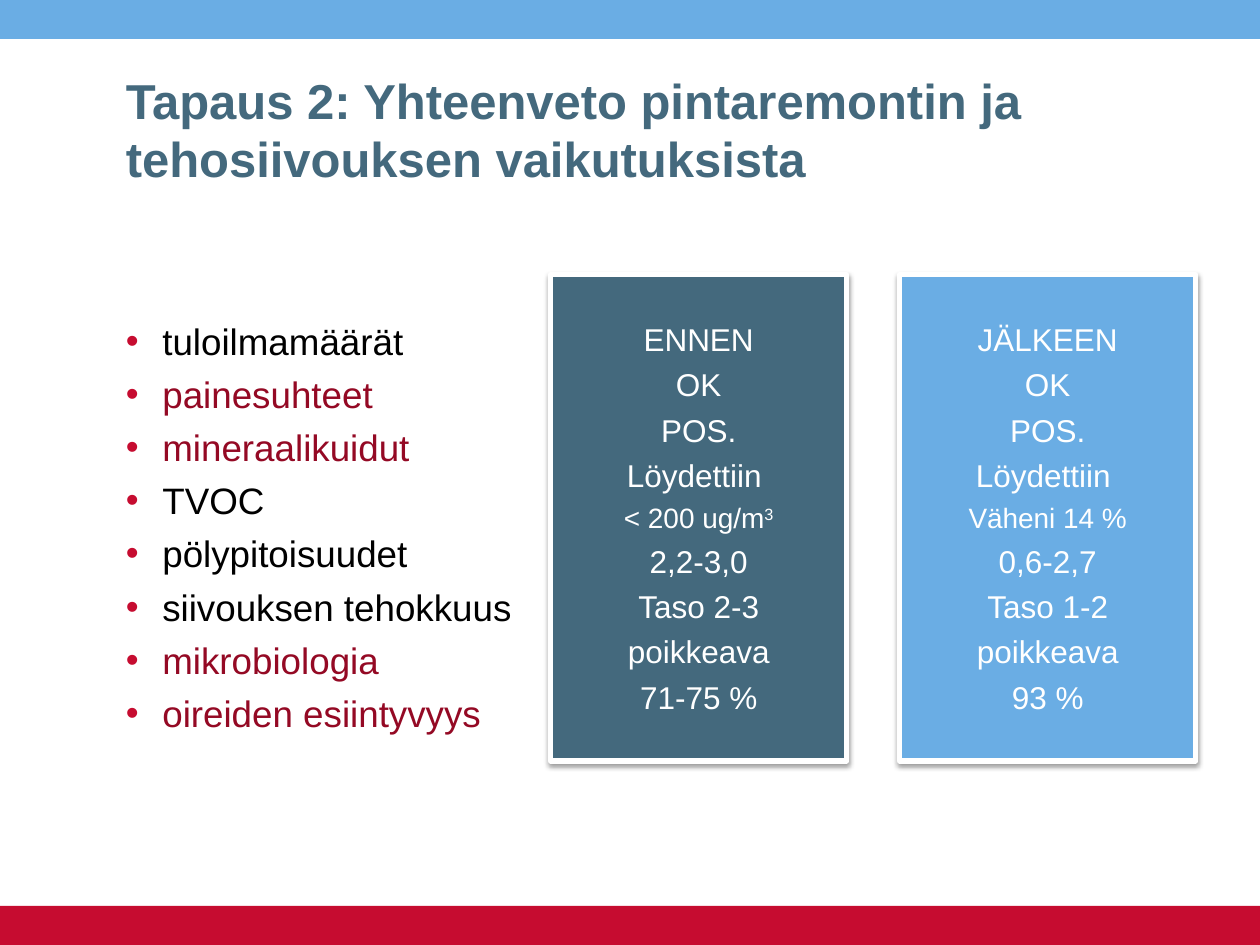
from lxml.etree import SubElement
from pptx import Presentation
from pptx.dml.color import RGBColor
from pptx.enum.shapes import MSO_SHAPE as Shape
from pptx.enum.text import MSO_ANCHOR as Anchor, PP_ALIGN as Align
from pptx.oxml.ns import qn
from pptx.util import Inches, Pt

COLORS = {"sky": "6AADE4", "red": "C60C30", "slate": "44697D",
          "dark_red": "940924", "black": "000000", "white": "FFFFFF"}
TITLE = "Tapaus 2: Yhteenveto pintaremontin ja tehosiivouksen vaikutuksista"
MEASURES = [("tuloilmamäärät", "black"), ("painesuhteet", "dark_red"),
            ("mineraalikuidut", "dark_red"), ("TVOC", "black"),
            ("pölypitoisuudet", "black"), ("siivouksen tehokkuus", "black"),
            ("mikrobiologia", "dark_red"), ("oireiden esiintyvyys", "dark_red")]
RESULTS = [
    ("slate", ["ENNEN", "OK", "POS.", "Löydettiin ", "< 200 ug/m^3", "2,2-3,0",
               "Taso 2-3", "poikkeava", "71-75 %"]),
    ("sky", ["JÄLKEEN", "OK", "POS.", "Löydettiin ", "Väheni 14 %", "0,6-2,7",
             "Taso 1-2", "poikkeava", "93 %"]),
]
SMALL_ROW = 4
BAND_HEIGHT = 0.31
SLIDE_WIDTH, SLIDE_HEIGHT = 10, 7.5
CARD_LEFT, CARD_TOP, CARD_WIDTH, CARD_HEIGHT, CARD_STEP = 4.37, 2.18, 2.35, 3.86, 2.77
BULLET_INDENT = Inches(0.29)


def rgb(name):
    return RGBColor.from_string(COLORS[name])


def add_rectangle(slide, left, top, width, height, fill):
    shape = slide.shapes.add_shape(
        Shape.RECTANGLE, *map(Inches, (left, top, width, height)))
    shape.shadow.inherit = False
    shape.fill.solid()
    shape.fill.fore_color.rgb = rgb(fill)
    shape.line.fill.background()
    return shape


def add_text_box(slide, left, top, width, height, anchor):
    frame = slide.shapes.add_textbox(
        *map(Inches, (left, top, width, height))).text_frame
    frame.word_wrap = True
    frame.vertical_anchor = anchor
    return frame


def add_paragraph(frame, index, space):
    if index == 0:
        return frame.paragraphs[0]
    paragraph = frame.add_paragraph()
    paragraph.space_before = Pt(space)
    return paragraph


def add_run(paragraph, text, size, color, **formats):
    run = paragraph.add_run()
    run.text = text
    settings = {"name": "Arial", "size": Pt(size), **formats}
    for name, value in settings.items():
        setattr(run.font, name, value)
    run.font.color.rgb = rgb(color)
    return run


def add_bullet(paragraph):
    properties = paragraph._p.get_or_add_pPr()
    properties.set("marL", str(BULLET_INDENT))
    properties.set("indent", str(-BULLET_INDENT))
    color = SubElement(properties, qn("a:buClr"))
    SubElement(color, qn("a:srgbClr"), val=COLORS["red"])
    SubElement(properties, qn("a:buFont"), typeface="Arial")
    SubElement(properties, qn("a:buChar"), char="•")


def add_shadow(shape):
    effects = shape._element.spPr.find(qn("a:effectLst"))
    shadow = SubElement(effects, qn("a:outerShdw"), blurRad=str(Pt(3.1)),
                        dist=str(Pt(1.6)), dir="5400000", rotWithShape="0")
    color = SubElement(shadow, qn("a:srgbClr"), val=COLORS["black"])
    SubElement(color, qn("a:alpha"), val="38000")


def add_card(slide, column, fill, lines):
    card = add_rectangle(slide, CARD_LEFT + column * CARD_STEP, CARD_TOP,
                         CARD_WIDTH, CARD_HEIGHT, fill)
    card.line.color.rgb = rgb("white")
    card.line.width = Pt(3)
    add_shadow(card)
    frame = card.text_frame
    frame.word_wrap = True
    frame.vertical_anchor = Anchor.MIDDLE
    for row, line in enumerate(lines):
        size = 16 if row == SMALL_ROW else 18
        paragraph = add_paragraph(frame, row, size * 0.24)
        paragraph.alignment = Align.CENTER
        base, _, exponent = line.partition("^")
        add_run(paragraph, base, size, "white")
        if exponent:
            raised = add_run(paragraph, exponent, size, "white")
            raised.font._element.set("baseline", "30000")


def main():
    """Build the before-and-after summary slide."""
    presentation = Presentation()
    presentation.slide_width = Inches(SLIDE_WIDTH)
    presentation.slide_height = Inches(SLIDE_HEIGHT)
    slide = presentation.slides.add_slide(presentation.slide_layouts[6])

    for top, fill in ((0, "sky"), (SLIDE_HEIGHT - BAND_HEIGHT, "red")):
        add_rectangle(slide, 0, top, SLIDE_WIDTH, BAND_HEIGHT, fill)

    title = add_text_box(slide, 0.9, 0.36, 8.19, 1.18, Anchor.BOTTOM)
    add_run(title.paragraphs[0], TITLE, 28, "slate", bold=True)

    body = add_text_box(slide, 0.9, 1.78, 8.19, 4.8, Anchor.MIDDLE)
    for index, (text, color) in enumerate(MEASURES):
        paragraph = add_paragraph(body, index, 5.2)
        add_bullet(paragraph)
        add_run(paragraph, text, 21, color)

    for column, (fill, lines) in enumerate(RESULTS):
        add_card(slide, column, fill, lines)

    presentation.save("out.pptx")


if __name__ == "__main__":
    main()
